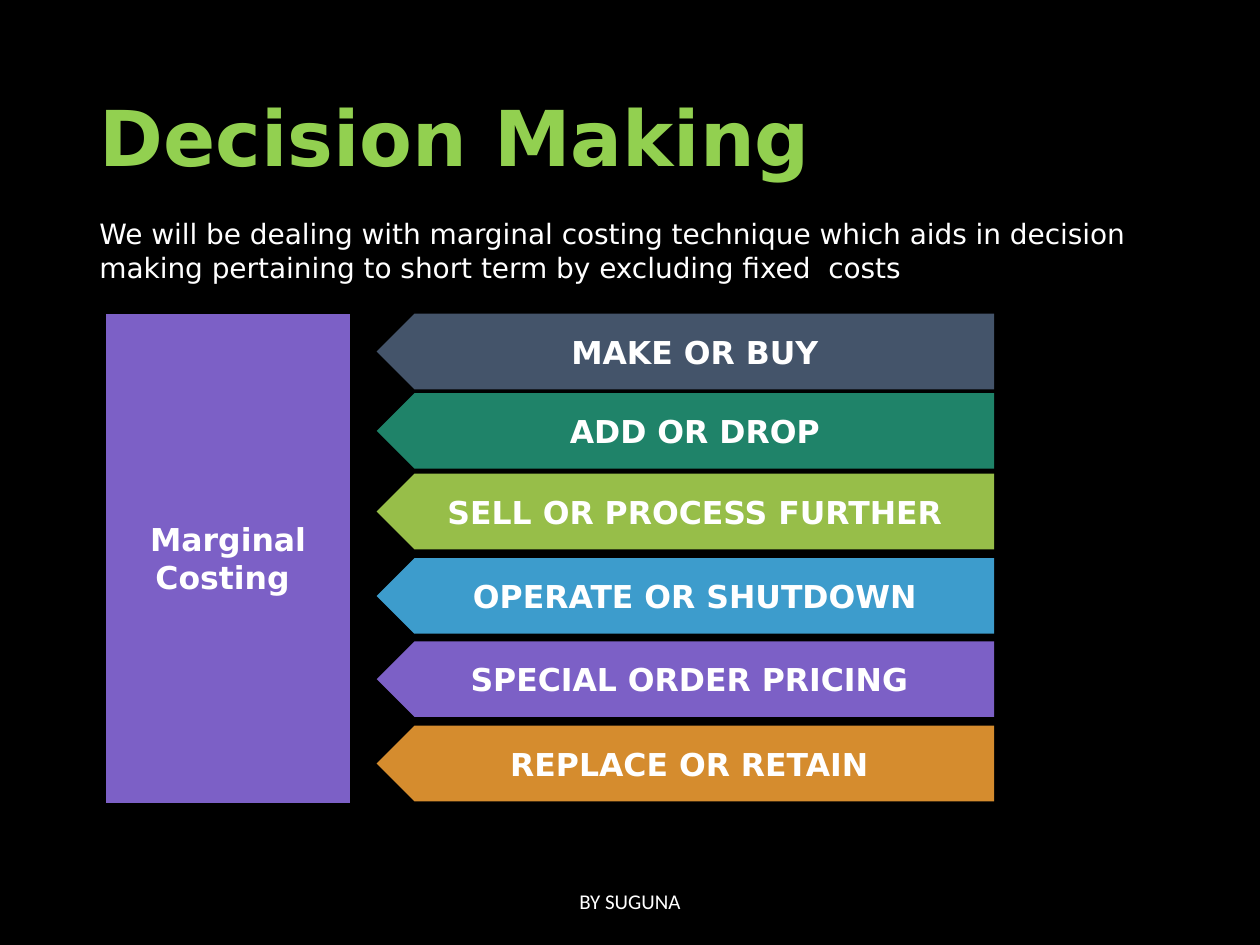
from pptx import Presentation
from pptx.dml.color import RGBColor
from pptx.enum.shapes import MSO_SHAPE as Kind
from pptx.enum.text import MSO_ANCHOR as Anchor, PP_ALIGN as Align
from pptx.oxml.ns import qn
from pptx.util import Inches, Pt

BLACK = RGBColor(0x00, 0x00, 0x00)
WHITE = RGBColor(0xFF, 0xFF, 0xFF)
LIME = RGBColor(0x92, 0xD0, 0x50)
SLATE = RGBColor(0x44, 0x54, 0x6A)
TEAL = RGBColor(0x1F, 0x83, 0x69)
GREEN = RGBColor(0x97, 0xBE, 0x49)
BLUE = RGBColor(0x3D, 0x9C, 0xCC)
PURPLE = RGBColor(0x7C, 0x60, 0xC6)
ORANGE = RGBColor(0xD5, 0x8C, 0x2E)

deck = Presentation()
deck.slide_width, deck.slide_height = Inches(10), Inches(7.5)
slide = deck.slides.add_slide(deck.slide_layouts[6])
slide.background.fill.solid()
slide.background.fill.fore_color.rgb = BLACK


def write(shape, text, size=18, font="DejaVu Sans", color=WHITE, bold=False,
          align=Align.CENTER, anchor=Anchor.MIDDLE, spacing=None):
    frame = shape.text_frame
    frame.word_wrap = True
    frame.vertical_anchor = anchor
    para = frame.paragraphs[0]
    para.alignment = align
    para.line_spacing = spacing
    run = para.add_run()
    run.text = text
    run.font.size = Pt(size)
    run.font.name = font
    run.font.bold = bold
    run.font.color.rgb = color


def block(kind, box, fill, text):
    """Add a plain filled shape with a bold label."""
    shape = slide.shapes.add_shape(kind, *map(Inches, box))
    shape.shadow.inherit = False
    shape.fill.solid()
    shape.fill.fore_color.rgb = fill
    shape.line.fill.background()
    write(shape, text, bold=True)
    return shape


title = slide.shapes.add_textbox(Inches(0.69), Inches(0.4), Inches(8.62), Inches(1.45))
write(title, "Decision Making", size=44, color=LIME, bold=True,
      align=Align.LEFT, spacing=0.9)

intro = slide.shapes.add_textbox(Inches(0.69), Inches(1.67), Inches(8.62), Inches(0.64))
write(intro, "We will be dealing with marginal costing technique which aids in "
      "decision making pertaining to short term by excluding fixed  costs",
      size=16, align=Align.LEFT, anchor=Anchor.TOP)

block(Kind.FLOWCHART_PROCESS, (0.84, 2.49, 1.94, 3.88), PURPLE, "Marginal Costing ")

choices = [
    (2.49, SLATE, "MAKE OR BUY"),
    (3.12, TEAL, "ADD OR DROP"),
    (3.76, GREEN, "SELL OR PROCESS FURTHER"),
    (4.43, BLUE, "OPERATE OR SHUTDOWN"),
    (5.09, PURPLE, "SPECIAL ORDER PRICING "),
    (5.76, ORANGE, "REPLACE OR RETAIN "),
]
for top, fill, text in choices:
    arrow = block(Kind.PENTAGON, (2.99, top, 4.9, 0.6), fill, text)
    arrow._element.spPr.find(qn("a:xfrm")).set("flipH", "1")

footer = slide.shapes.add_textbox(Inches(3.31), Inches(6.95), Inches(3.38), Inches(0.4))
write(footer, "BY SUGUNA", size=12, font="Calibri")

deck.save("out.pptx")
